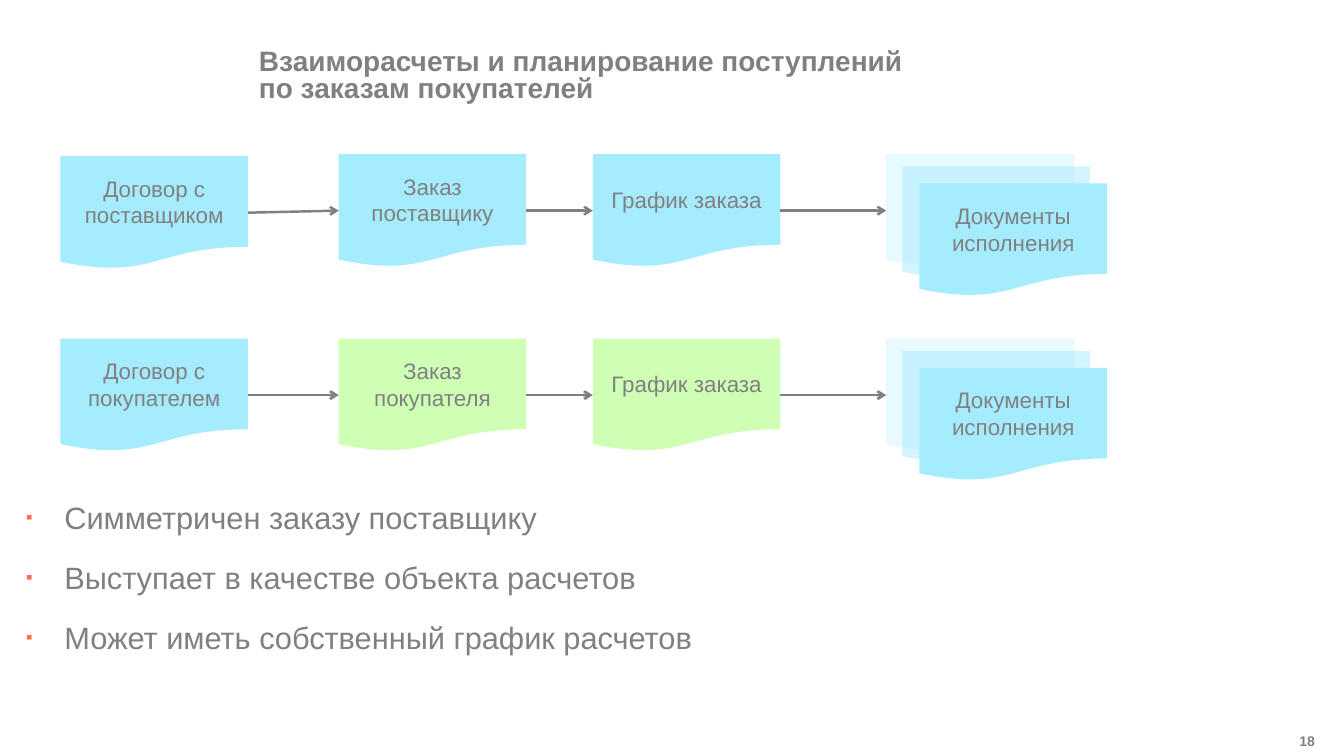
from dataclasses import dataclass
from itertools import pairwise
from lxml import etree
from pptx import Presentation
from pptx.dml.color import RGBColor
from pptx.enum.shapes import MSO_CONNECTOR, MSO_SHAPE
from pptx.enum.text import MSO_ANCHOR, PP_ALIGN
from pptx.oxml.ns import qn
from pptx.util import Inches, Pt


@dataclass(frozen=True)
class Theme:
    """Colours, type sizes and the grid step of the slide."""
    font: str = "Arial"
    grey: str = "808080"
    blue: str = "A6ECFF"
    green: str = "CEFFB5"
    bullet: str = "FC6E51"
    title: int = 20
    body: int = 22
    label: int = 16
    number: int = 10
    line: float = 1.75
    cell: int = Inches(0.1)


@dataclass(frozen=True)
class Box:
    """A rectangle measured in grid cells."""
    x: float
    y: float
    w: float
    h: float

    def shifted(self, dx, dy):
        """Return the same rectangle moved by dx columns and dy rows."""
        return Box(self.x + dx, self.y + dy, self.w, self.h)

    def emu(self):
        """Return left, top, width and height as slide lengths."""
        return [cells(value) for value in (self.x, self.y, self.w, self.h)]


THEME = Theme()
DOCUMENT_W, DOCUMENT_H = 18.6, 11.2
STEP_COLUMNS = (0, 27.6, 52.8, 81.9)
STACK = ((0, 0, 25), (1.6, 1.2, 50), (3.3, 2.9, 100))


def cells(count):
    """Convert grid cells to a slide length."""
    return round(count * THEME.cell)


def style(paragraph, size, bold=False):
    """Set the slide's font on a paragraph."""
    font = paragraph.font
    font.name, font.size, font.bold = THEME.font, Pt(size), bold
    font.color.rgb = RGBColor.from_string(THEME.grey)


def add_text(slide, box):
    """Add a wrapping text box and return its text frame."""
    frame = slide.shapes.add_textbox(*box.emu()).text_frame
    frame.word_wrap = True
    return frame


def add_title(slide, box, text):
    """Add the bold slide title, centred vertically in its box."""
    frame = add_text(slide, box)
    frame.vertical_anchor = MSO_ANCHOR.MIDDLE
    heading = frame.paragraphs[0]
    heading.text = text
    heading.line_spacing = 0.8
    style(heading, THEME.title, bold=True)


def add_document(slide, box, color, label="", opacity=100):
    """Add one document symbol with an optional label."""
    document = slide.shapes.add_shape(MSO_SHAPE.FLOWCHART_DOCUMENT, *box.emu())
    document.shadow.inherit = False
    document.line.fill.background()
    document.fill.solid()
    document.fill.fore_color.rgb = RGBColor.from_string(color)
    if opacity < 100:
        tint = document.fill._xPr.find(qn("a:solidFill"))[0]
        etree.SubElement(tint, qn("a:alpha"), val=str(opacity * 1000))
    if label:
        frame = document.text_frame
        frame.word_wrap = True
        frame.vertical_anchor = MSO_ANCHOR.MIDDLE
        caption = frame.paragraphs[0]
        caption.text = label
        caption.alignment = PP_ALIGN.CENTER
        style(caption, THEME.label)


def add_arrow(slide, source, target):
    """Join the right middle of one box to the left middle of the next."""
    arrow = slide.shapes.add_connector(
        MSO_CONNECTOR.STRAIGHT,
        cells(source.x + source.w), cells(source.y + source.h / 2),
        cells(target.x), cells(target.y + target.h / 2))
    arrow.line.width = Pt(THEME.line)
    arrow.line.color.rgb = RGBColor.from_string(THEME.grey)
    etree.SubElement(arrow.line._get_or_add_ln(), qn("a:tailEnd"), type="arrow")
    etree.SubElement(arrow._element.spPr, qn("a:effectLst"))


def add_flow(slide, box, steps, result, first_drop=0):
    """Add a row of documents that leads to a stack of result documents."""
    drops = (first_drop, 0, 0, 0)
    places = [Box(box.x + column, box.y + drop, DOCUMENT_W, DOCUMENT_H)
              for column, drop in zip(STEP_COLUMNS, drops)]
    for place, (label, color) in zip(places, steps):
        add_document(slide, place, color, label)
    for dx, dy, opacity in STACK:
        add_document(slide, places[-1].shifted(dx, dy), THEME.blue,
                     result if opacity == 100 else "", opacity)
    for source, target in pairwise(places):
        add_arrow(slide, source, target)


def add_bullets(slide, box, points):
    """Add the list of points with small square bullets."""
    frame = add_text(slide, box)
    for index, point in enumerate(points):
        item = frame.add_paragraph() if index else frame.paragraphs[0]
        item.text = point
        item.space_before = Pt(5 if index else 0)
        item.space_after = Pt(11.5)
        properties = item._p.get_or_add_pPr()
        properties.set("marL", str(cells(3.8)))
        properties.set("indent", str(cells(-3.8)))
        color = etree.SubElement(properties, qn("a:buClr"))
        etree.SubElement(color, qn("a:srgbClr"), val=THEME.bullet)
        etree.SubElement(properties, qn("a:buSzPct"), val="60000")
        etree.SubElement(properties, qn("a:buFont"), typeface=THEME.font)
        etree.SubElement(properties, qn("a:buChar"), char="▪")
        style(item, THEME.body)


def add_number(slide, box, number):
    """Add the slide number, aligned right."""
    page = add_text(slide, box).paragraphs[0]
    page.text = number
    page.alignment = PP_ALIGN.RIGHT
    style(page, THEME.number, bold=True)


def main():
    """Build the slide and save it."""
    deck = Presentation()
    deck.slide_width, deck.slide_height = Inches(13.33), Inches(7.5)
    slide = deck.slides.add_slide(deck.slide_layouts[6])
    add_title(slide, Box(24.7, 1.7, 70.3, 11.8),
              "Взаиморасчеты и планирование поступлений\vпо заказам покупателей")
    supplier = Box(6, 15.3, 103.8, 14.1)
    add_flow(slide, supplier,
             [("Договор с поставщиком", THEME.blue),
              ("Заказ поставщику", THEME.blue),
              ("График заказа", THEME.blue)],
             "Документы исполнения", first_drop=0.2)
    add_flow(slide, supplier.shifted(0, 18.3),
             [("Договор с покупателем", THEME.blue),
              ("Заказ покупателя", THEME.green),
              ("График заказа", THEME.green)],
             "Документы исполнения")
    add_bullets(slide, Box(1.6, 49, 130.2, 23.2),
                ["Симметричен заказу поставщику",
                 "Выступает в качестве объекта расчетов",
                 "Может иметь собственный график расчетов"])
    add_number(slide, Box(120.2, 72.2, 11.2, 2.8), "18")
    deck.save("out.pptx")


if __name__ == "__main__":
    main()
